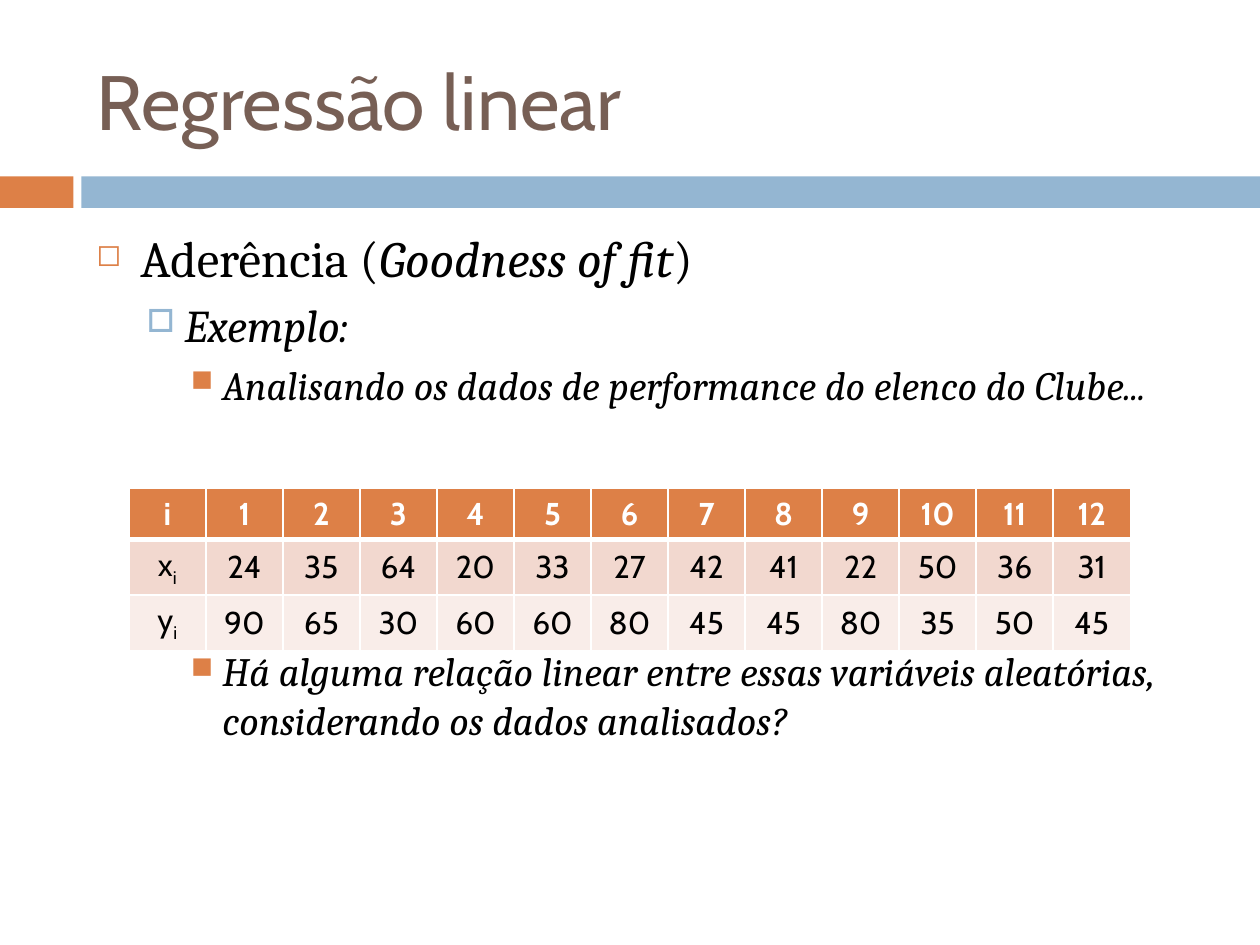
from lxml.etree import SubElement
from pptx import Presentation
from pptx.dml.color import RGBColor
from pptx.enum.shapes import MSO_SHAPE
from pptx.enum.text import MSO_ANCHOR, PP_ALIGN
from pptx.oxml.ns import qn
from pptx.util import Pt

THEME = {
    "orange": "DD8047", "blue": "94B6D2", "brown": "775F55",
    "black": "000000", "white": "FFFFFF",
    "rows": ["DD8047", "F2D8CF", "F9EDE9"],
    "heading": "Cabin", "body": "Cambria",
    "title_size": 44, "level_sizes": [29, 26, 23], "table_size": 18,
}

TITLE = "Regressão linear"
BANDS = [(0, 42, "orange"), (46.5, 673.5, "blue")]  # left, width, colour

# Bullet level, space before, runs of (text, italic)
OUTLINE = [
    (0, 7, [("Aderência (", False), ("Goodness of fit", True), (")", False)]),
    (1, 5.5, [("Exemplo:", True)]),
    (2, 5, [("Analisando os dados de performance do elenco do Clube...", True)]),
    (2, 136, [("Há alguma relação linear entre essas variáveis aleatórias, "
               "considerando os dados analisados?", True)]),
]
# Symbol, colour, size in percent, text indent, hanging indent
BULLETS = [
    ("◻", "orange", 60, 25.2, 25.2),
    ("□", "blue", 70, 50.4, 21.6),
    ("■", "orange", 75, 72, 18),
]

# Row label, subscript, values
DATA = [
    ("i", "", range(1, 13)),
    ("x", "i", [24, 35, 64, 20, 33, 27, 42, 41, 22, 50, 36, 31]),
    ("y", "i", [90, 65, 30, 60, 60, 80, 45, 45, 80, 35, 50, 45]),
]


def color(value):
    return RGBColor.from_string(value)


def add_text(paragraph, text, *, size, font, fill, bold=False, italic=False, baseline=0):
    run = paragraph.add_run()
    run.text = text
    run.font.size = Pt(size)
    run.font.name = font
    run.font.color.rgb = color(fill)
    run.font.bold = bold
    run.font.italic = italic
    if baseline:
        run.font._element.set("baseline", str(baseline * 1000))


def add_text_frame(slide, left, top, width, height, anchor):
    frame = slide.shapes.add_textbox(Pt(left), Pt(top), Pt(width), Pt(height)).text_frame
    frame.word_wrap = True
    frame.vertical_anchor = anchor
    return frame


def set_bullet(paragraph, level):
    symbol, fill, percent, indent, hanging = BULLETS[level]
    properties = paragraph._p.get_or_add_pPr()
    properties.set("marL", str(Pt(indent)))
    properties.set("indent", str(-Pt(hanging)))
    bullet_color = SubElement(properties, qn("a:buClr"))
    SubElement(bullet_color, qn("a:srgbClr"), val=THEME[fill])
    SubElement(properties, qn("a:buSzPct"), val=str(percent * 1000))
    SubElement(properties, qn("a:buChar"), char=symbol)


def set_borders(cell, bottom):
    """Draw white cell borders; must run before the cell is filled."""
    properties = cell._tc.get_or_add_tcPr()
    for side, width in (("L", 1), ("R", 1), ("T", 1), ("B", bottom)):
        line = SubElement(properties, qn(f"a:ln{side}"), w=str(Pt(width)))
        fill = SubElement(line, qn("a:solidFill"))
        SubElement(fill, qn("a:srgbClr"), val=THEME["white"])


def add_bands(slide):
    for left, width, fill in BANDS:
        band = slide.shapes.add_shape(MSO_SHAPE.RECTANGLE, Pt(left), Pt(100.8), Pt(width), Pt(18))
        band.shadow.inherit = False
        band.fill.solid()
        band.fill.fore_color.rgb = color(THEME[fill])
        band.line.fill.background()


def add_outline(slide):
    frame = add_text_frame(slide, 48, 126, 642, 376.5, MSO_ANCHOR.TOP)
    for index, (level, space, runs) in enumerate(OUTLINE):
        paragraph = frame.add_paragraph() if index else frame.paragraphs[0]
        paragraph.level = level
        paragraph.space_before = Pt(space)
        set_bullet(paragraph, level)
        for text, italic in runs:
            add_text(paragraph, text, size=THEME["level_sizes"][level],
                     font=THEME["body"], fill=THEME["black"], italic=italic)


def add_data_table(slide):
    columns = len(DATA[0][2]) + 1
    width, row_height = 572.4, 29.2
    table = slide.shapes.add_table(len(DATA), columns, Pt(73.6), Pt(279),
                                   Pt(width), Pt(row_height * len(DATA))).table
    for column in table.columns:
        column.width = Pt(width / columns)
    for row, (label, subscript, values) in enumerate(DATA):
        header = row == 0
        style = {"size": THEME["table_size"], "font": THEME["heading"], "bold": header,
                 "fill": THEME["white" if header else "black"]}
        for column, text in enumerate([label, *values]):
            cell = table.cell(row, column)
            set_borders(cell, bottom=3 if header else 1)
            cell.fill.solid()
            cell.fill.fore_color.rgb = color(THEME["rows"][row])
            cell.vertical_anchor = MSO_ANCHOR.MIDDLE
            paragraph = cell.text_frame.paragraphs[0]
            paragraph.alignment = PP_ALIGN.CENTER
            add_text(paragraph, str(text), **style)
            if column == 0 and subscript:
                add_text(paragraph, subscript, baseline=-25, **style)


def main():
    presentation = Presentation()
    presentation.slide_width, presentation.slide_height = Pt(720), Pt(540)
    slide = presentation.slides.add_slide(presentation.slide_layouts[6])
    add_bands(slide)
    title = add_text_frame(slide, 48, 18, 642, 78, MSO_ANCHOR.MIDDLE)
    add_text(title.paragraphs[0], TITLE, size=THEME["title_size"],
             font=THEME["heading"], fill=THEME["brown"])
    add_outline(slide)
    add_data_table(slide)
    presentation.save("out.pptx")


if __name__ == "__main__":
    main()
